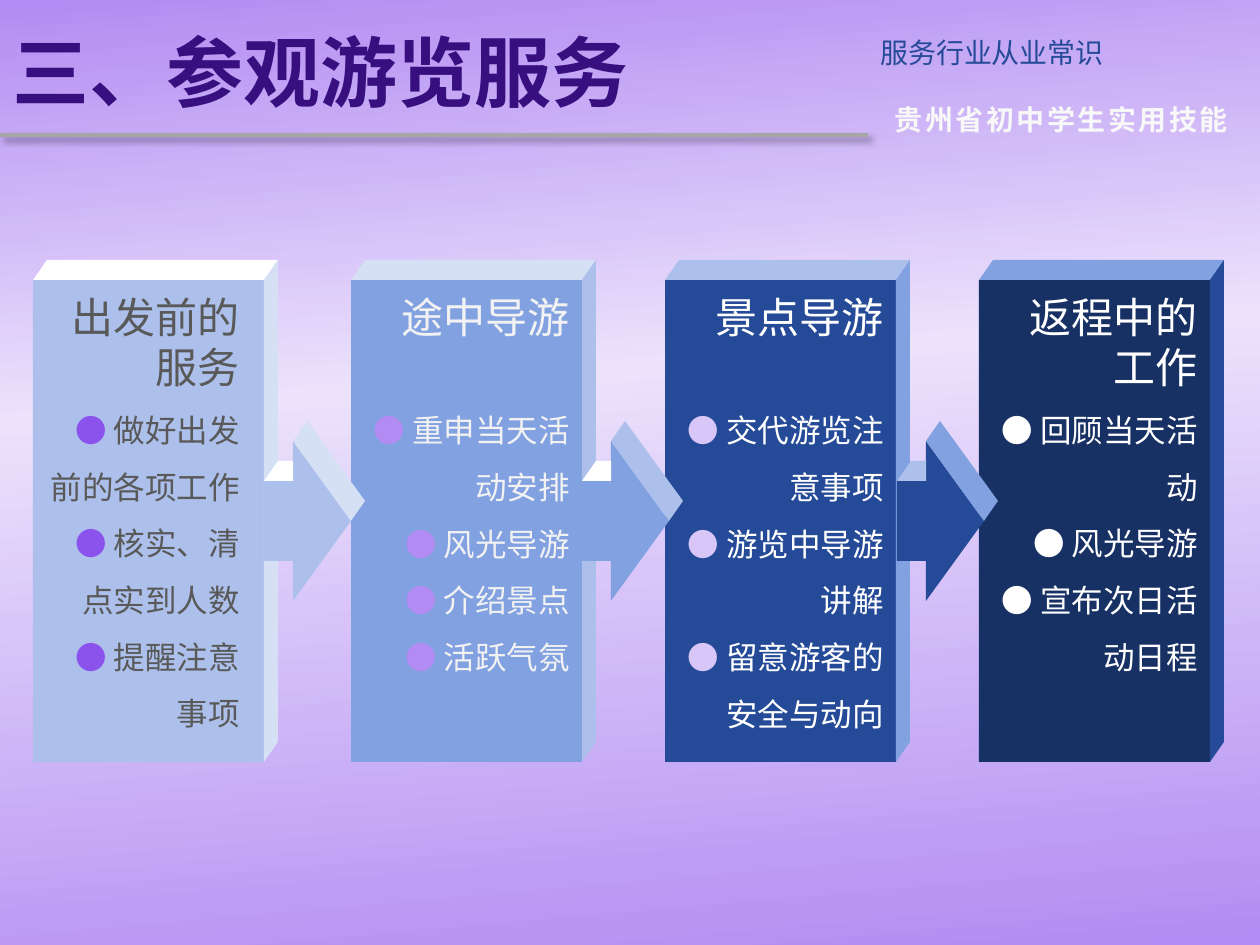
import copy

import pptx
import pptx.dml.color
import pptx.enum.shapes
import pptx.enum.text
import pptx.oxml
import pptx.oxml.ns
import pptx.util

SCALE = 914400 / 126  # EMU per px
CJK = "Noto Sans CJK SC"
ALIGN = pptx.enum.text.PP_ALIGN
QN = pptx.oxml.ns.qn
NAMESPACE = pptx.oxml.ns.nsdecls("a")

# Block geometry, px
BLOCK_TOP, BLOCK_WIDTH, BLOCK_HEIGHT = 280, 231, 482
DEPTH_X, DEPTH_Y = 14, 20

# left, text left, text width, front, top, side, text colour, bullet colour, heading, items
STAGES = [
    (33, 33, 219, "ACC0EB", "FFFFFF", "D5E0F5", "595959", "8B53EB", "出发前的服务",
     ["做好出发前的各项工作", "核实、清点实到人数", "提醒注意事项"]),
    (351, 353, 229, "82A1E1", "D5E0F5", "ACC0EB", "F2F2F2", "B28CF2", "途中导游",
     ["重申当天活动安排", "风光导游", "介绍景点", "活跃气氛"]),
    (665, 665, 231, "254A97", "ACC0EB", "82A1E1", "FFFFFF", "D8C6F8", "景点导游",
     ["交代游览注意事项", "游览中导游讲解", "留意游客的安全与动向"]),
    (979, 979, 231, "183165", "82A1E1", "254A97", "FFFFFF", "FFFFFF", "返程中的工作",
     ["回顾当天活动", "风光导游", "宣布次日活动日程"]),
]

# left, front, head edge, tail edge
ARROWS = [
    (264, "ACC0EB", "D5E0F5", "FFFFFF"),
    (582, "82A1E1", "ACC0EB", "FFFFFF"),
    (897, "254A97", "82A1E1", "ACC0EB"),
]


def px(length):
    return pptx.util.Emu(round(length * SCALE))


def color(value):
    return pptx.dml.color.RGBColor.from_string(value)


def paint(shape, fill):
    shape.fill.solid()
    shape.fill.fore_color.rgb = color(fill)
    shape.line.fill.background()
    shape.shadow.inherit = False


def add_polygon(slide, points, fill):
    builder = slide.shapes.build_freeform(*points[0], scale=SCALE)
    builder.add_line_segments(points[1:], close=True)
    paint(builder.convert_to_shape(), fill)


def format_run(run, size, fill, latin=CJK, bold=False):
    run.font.size = pptx.util.Pt(size)
    run.font.bold = bold
    run.font.color.rgb = color(fill)
    run.font.name = latin
    east_asian = pptx.oxml.parse_xml(f'<a:ea {NAMESPACE} typeface="{CJK}"/>')
    run.font._element.find(QN("a:latin")).addnext(east_asian)


def add_text_box(slide, left, top, width, height):
    box = slide.shapes.add_textbox(px(left), px(top), px(width), px(height))
    box.text_frame.word_wrap = True
    return box.text_frame


def add_label(slide, box, text, fill, alignment, bold=False, spacing=0):
    paragraph = add_text_box(slide, *box).paragraphs[0]
    paragraph.text = text
    paragraph.alignment = alignment
    format_run(paragraph.runs[0], 16, fill, bold=bold)
    if spacing:
        paragraph.runs[0].font._element.set("spc", str(spacing))


def add_block(slide, left, front, top_fill, side_fill):
    right, bottom = left + BLOCK_WIDTH, BLOCK_TOP + BLOCK_HEIGHT
    back = BLOCK_TOP - DEPTH_Y
    face = slide.shapes.add_shape(pptx.enum.shapes.MSO_SHAPE.RECTANGLE, px(left),
                                  px(BLOCK_TOP), px(BLOCK_WIDTH), px(BLOCK_HEIGHT))
    paint(face, front)
    add_polygon(slide, [(left, BLOCK_TOP), (left + DEPTH_X, back),
                        (right + DEPTH_X, back), (right, BLOCK_TOP)], top_fill)
    add_polygon(slide, [(right + DEPTH_X, back), (right + DEPTH_X, bottom - DEPTH_Y),
                        (right, bottom), (right, BLOCK_TOP)], side_fill)


def add_arrow(slide, left, front, head_fill, tail_fill):
    middle = BLOCK_TOP + BLOCK_HEIGHT // 2
    neck, tip = left + 29, left + 87
    tail_top, tail_bottom = middle - 40, middle + 40
    head_top, head_bottom = middle - 80, middle + 80
    add_polygon(slide, [(left, tail_bottom), (neck, tail_bottom), (neck, head_bottom),
                        (tip, middle), (neck, head_top), (neck, tail_top),
                        (left, tail_top)], front)
    add_polygon(slide, [(neck, head_top), (neck + DEPTH_X, head_top - DEPTH_Y),
                        (tip + DEPTH_X, middle - DEPTH_Y), (tip, middle)], head_fill)
    add_polygon(slide, [(neck, tail_top - DEPTH_Y), (left + DEPTH_X, tail_top - DEPTH_Y),
                        (left, tail_top), (neck, tail_top)], tail_fill)


def add_stage_text(slide, left, width, fill, bullet_fill, heading, items):
    frame = add_text_box(slide, left, 285, width, 459)
    paragraph = frame.paragraphs[0]
    paragraph.text = heading
    paragraph.alignment = ALIGN.RIGHT
    format_run(paragraph.runs[0], 24, fill)
    if len(heading) <= 4:  # a one-line heading keeps the room of two lines
        paragraph.space_after = pptx.util.Pt(29)
    for item in items:
        paragraph = frame.add_paragraph()
        paragraph.alignment = ALIGN.RIGHT
        paragraph.line_spacing = 1.5
        for text, run_fill, latin in (("● ", bullet_fill, "Calibri"), (item, fill, CJK)):
            run = paragraph.add_run()
            run.text = text
            format_run(run, 18, run_fill, latin)


def set_background(slide):
    fill = slide.background.fill
    fill.gradient()
    fill.gradient_angle = 275
    first = slide.element.find(".//" + QN("a:gs"))
    first.addnext(copy.deepcopy(first))
    stops = ((0, "B28CF2"), (0.4, "ECE2FC"), (1, "B28CF2"))
    for stop, (position, value) in zip(fill.gradient_stops, stops):
        stop.position = position
        stop.color.rgb = color(value)


def set_title(slide, text):
    title = slide.shapes.title
    title.left, title.top, title.width, title.height = px(0), px(6), px(868), px(129)
    frame = title.text_frame
    frame.text = text
    frame.vertical_anchor = pptx.enum.text.MSO_ANCHOR.MIDDLE
    frame.auto_size = pptx.enum.text.MSO_AUTO_SIZE.NONE
    frame.paragraphs[0].alignment = ALIGN.LEFT
    format_run(frame.paragraphs[0].runs[0], 44, "380F7F", bold=True)


def add_title_rule(slide):
    rule = slide.shapes.add_connector(pptx.enum.shapes.MSO_CONNECTOR.STRAIGHT,
                                      px(0), px(135), px(868), px(135))
    rule.line.color.rgb = color("A6A6A6")
    rule.line.width = pptx.util.Pt(2.25)
    rule._element.spPr.append(pptx.oxml.parse_xml(
        f'<a:effectLst {NAMESPACE}><a:outerShdw blurRad="50800" dist="38100" dir="2700000" '
        'algn="tl" rotWithShape="0"><a:srgbClr val="000000"><a:alpha val="40000"/>'
        '</a:srgbClr></a:outerShdw></a:effectLst>'))


def main():
    presentation = pptx.Presentation()
    presentation.slide_width, presentation.slide_height = px(1260), px(945)
    slide = presentation.slides.add_slide(presentation.slide_layouts[5])
    set_background(slide)

    # Header
    set_title(slide, "三、参观游览服务")
    add_title_rule(slide)
    add_label(slide, (878, 96, 367, 47), "贵州省初中学生实用技能", "F8F8F8",
              ALIGN.CENTER, bold=True, spacing=150)
    add_label(slide, (868, 29, 392, 47), "服务行业从业常识", "254A97", ALIGN.JUSTIFY)

    # Stages, with the arrows lying over the blocks
    for left, _, _, front, top, side, *_ in STAGES:
        add_block(slide, left, front, top, side)
    for arrow in ARROWS:
        add_arrow(slide, *arrow)
    for _, left, width, _, _, _, *content in STAGES:
        add_stage_text(slide, left, width, *content)

    presentation.save("out.pptx")


if __name__ == "__main__":
    main()
